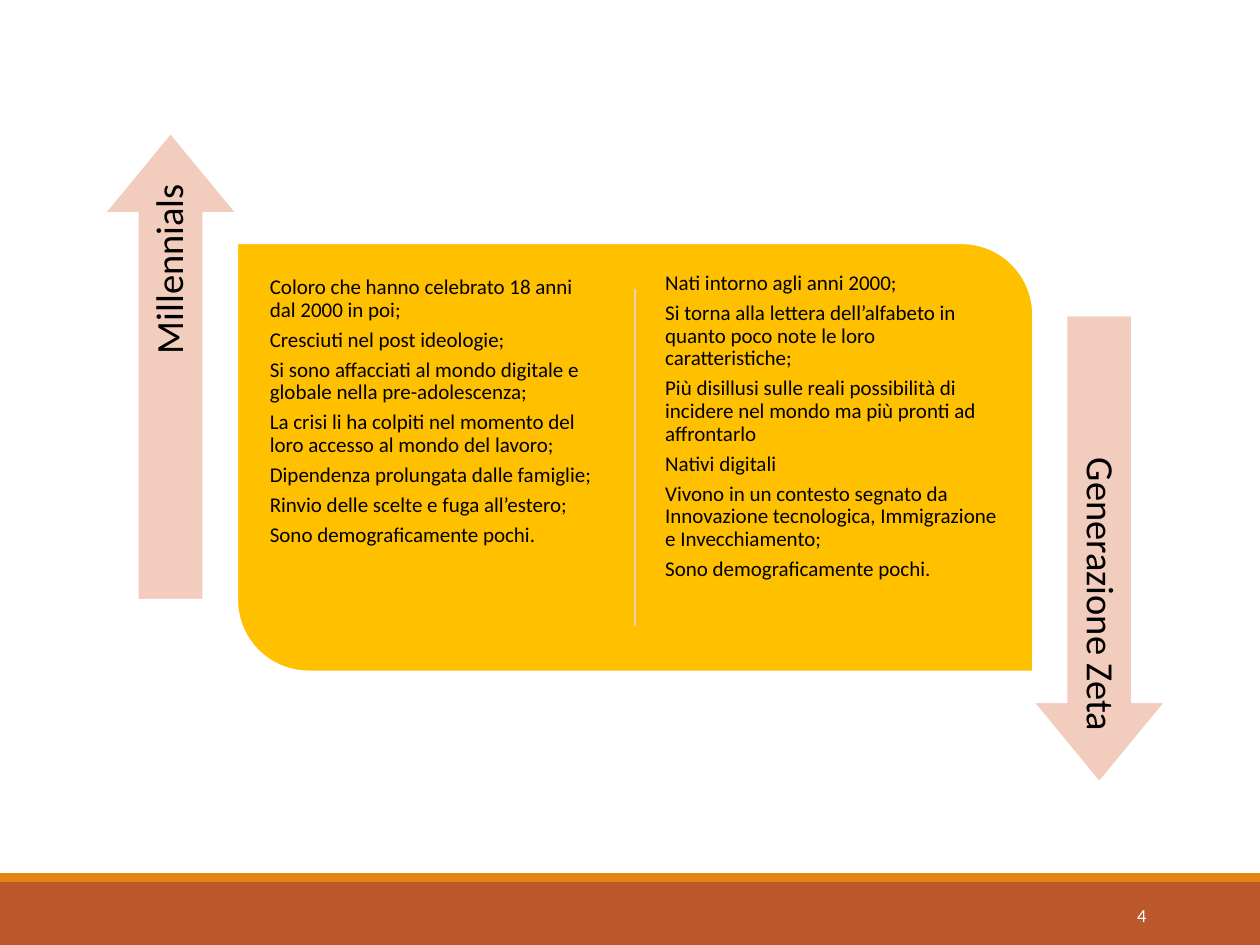
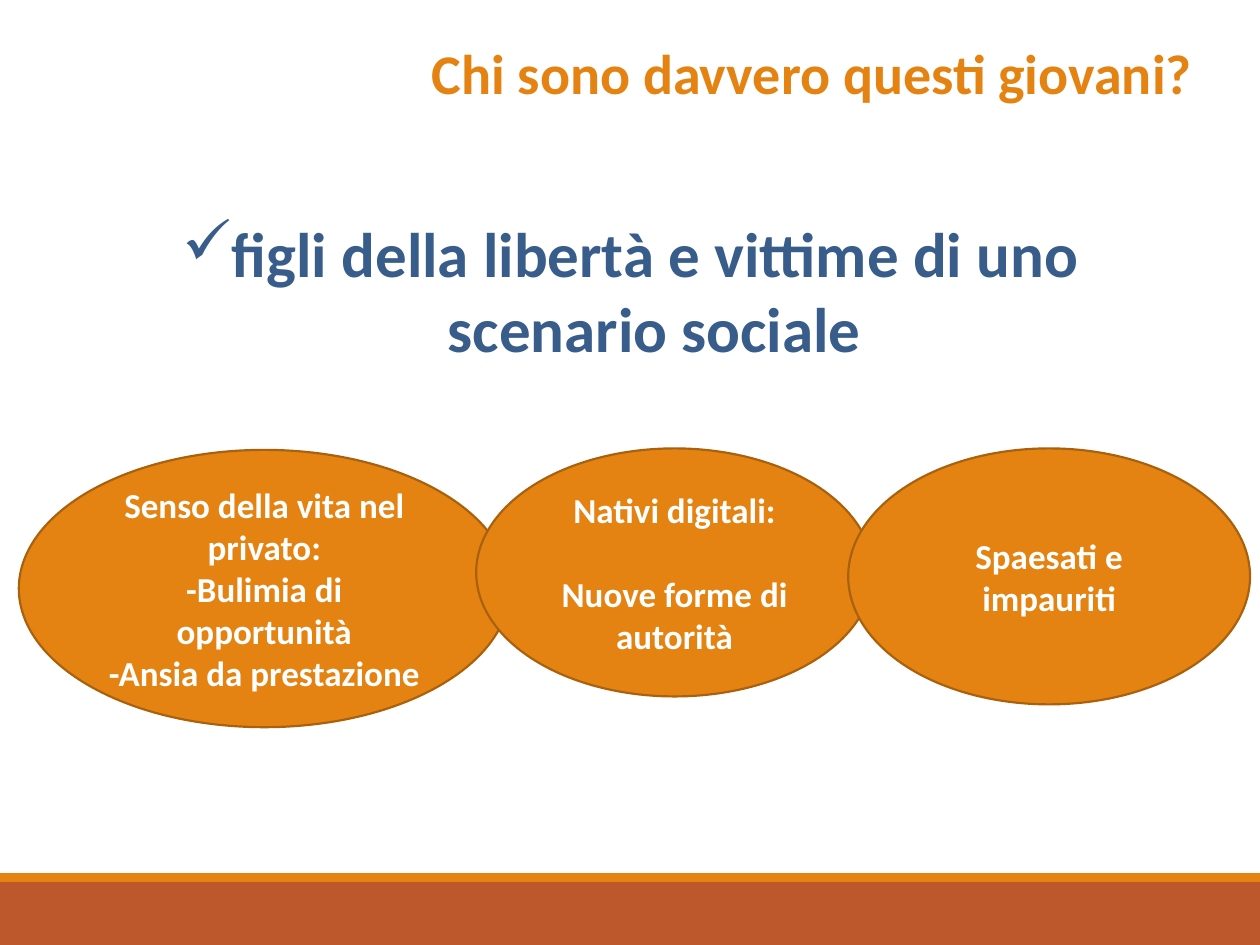
from lxml import etree
from pptx import Presentation
from pptx import util as u
from pptx.dml import color
from pptx.enum import shapes, text
from pptx.oxml import ns

RUST = color.RGBColor(0xBD, 0x58, 0x2C)
ORANGE = color.RGBColor(0xE4, 0x83, 0x12)
BROWN = color.RGBColor(0xA9, 0x61, 0x0D)
GOLD = color.RGBColor(0xFF, 0xC0, 0x00)
PEACH = color.RGBColor(0xF2, 0xCD, 0xBD)
BLUE = color.RGBColor(0x38, 0x5D, 0x8A)
WHITE = color.RGBColor(0xFF, 0xFF, 0xFF)
BLACK = color.RGBColor(0, 0, 0)

FONT = "Calibri"
EDGE = 1.25
WIDE, HIGH = 25.4, 19.05
KIND = shapes.MSO_SHAPE
LEFT, MID, RIGHT = text.PP_ALIGN.LEFT, text.PP_ALIGN.CENTER, text.PP_ALIGN.RIGHT
TOP, CENTRE = text.MSO_ANCHOR.TOP, text.MSO_ANCHOR.MIDDLE

OLDER = [
    "Coloro che hanno celebrato 18 anni dal 2000 in poi;",
    "Cresciuti nel post ideologie;",
    "Si sono affacciati al mondo digitale e globale nella pre-adolescenza;",
    "La crisi li ha colpiti nel momento del loro accesso al mondo del lavoro;",
    "Dipendenza prolungata dalle famiglie;",
    "Rinvio delle scelte e fuga all’estero;",
    "Sono demograficamente pochi.",
]
YOUNGER = [
    "Nati intorno agli anni 2000;",
    "Si torna alla lettera dell’alfabeto in quanto poco note le loro caratteristiche;",
    "Più disillusi sulle reali possibilità di incidere nel mondo ma più pronti ad affrontarlo",
    "Nativi digitali",
    "Vivono in un contesto segnato da Innovazione tecnologica, Immigrazione e Invecchiamento;",
    "Sono demograficamente pochi.",
]
TRAITS = [
    ((0.38, 9.07, 9.9, 5.59), 0,
     ["Senso della vita nel privato:", "-Bulimia di opportunità", "-Ansia da prestazione"]),
    ((9.6, 9.04, 8, 5), 24, ["Nativi digitali:", "Nuove forme di autorità"]),
    ((17.1, 9.04, 8.1, 5.16), 0, ["Spaesati e impauriti"]),
]


def cm(box):
    return [u.Cm(v) for v in box]


def write(shape, lines, size=20, ink=WHITE, bold=False, align=LEFT, anchor=TOP,
          inset=(0.25, 0.13), pitch=1, after=0, gap=0, mark=None, indent=0.97):
    frame = shape.text_frame
    frame.word_wrap = True
    frame.vertical_anchor = anchor
    frame.margin_left = frame.margin_right = u.Cm(inset[0])
    frame.margin_top = frame.margin_bottom = u.Cm(inset[1])
    for i, line in enumerate(lines):
        para = frame.add_paragraph() if i else frame.paragraphs[0]
        para.alignment = align
        para.line_spacing = pitch
        para.space_before = u.Pt(gap if i else 0)
        para.space_after = u.Pt(after)
        run = para.add_run()
        run.text = line
        run.font.name = FONT
        run.font.size = u.Pt(size)
        run.font.bold = bold
        run.font.color.rgb = ink
        if mark:
            props = para._p.get_or_add_pPr()
            props.set("marL", str(u.Cm(indent)))
            props.set("indent", str(-u.Cm(indent)))
            etree.SubElement(props, ns.qn("a:buChar")).set("char", mark)


def label(slide, box, lines, **style):
    write(slide.shapes.add_textbox(*cm(box)), lines, **style)


def block(slide, kind, box, fill, edge=None, bends=()):
    shape = slide.shapes.add_shape(kind, *cm(box))
    shape.shadow.inherit = False
    shape.fill.solid()
    shape.fill.fore_color.rgb = fill
    if edge is None:
        shape.line.fill.background()
    else:
        shape.line.color.rgb = edge
        shape.line.width = u.Pt(EDGE)
    for i, bend in enumerate(bends):
        shape.adjustments[i] = bend
    return shape


def rule(slide, x, top, low, ink):
    line = slide.shapes.add_connector(
        shapes.MSO_CONNECTOR.STRAIGHT, *cm((x, top, x, low)))
    line.line.color.rgb = ink
    line.line.width = u.Pt(EDGE)
    etree.SubElement(line._element.spPr, ns.qn("a:effectLst"))


def footer(slide, box, number=None):
    x, y, w, h = box
    block(slide, KIND.RECTANGLE, box, RUST)
    block(slide, KIND.RECTANGLE, (x, y - 0.18, w, 0.18), ORANGE)
    if number:
        label(slide, (x + 20.62, y + 0.15, 2.74, 1.02), [number], size=10.5,
              align=RIGHT, anchor=CENTRE)


def card(slide, box):
    x, y, w, h = box
    block(slide, KIND.ROUND_2_DIAG_RECTANGLE, box, GOLD, WHITE, (0, 0.167))
    rule(slide, x + w / 2, y + 0.92, y + h - 0.92, PEACH)
    for i, (lines, drop) in enumerate([(OLDER, 0.54), (YOUNGER, 0.46)]):
        label(slide, (x + 0.53 + i * 7.97, y + drop, 6.96, 7.5), lines, size=12,
              ink=BLACK, inset=(0.13, 0.13), pitch=0.9, after=4.2)


def arrow(slide, box, turn, name):
    shape = block(slide, KIND.RIGHT_ARROW, box, PEACH, WHITE, (0.498, 0.607))
    shape.rotation = turn
    write(shape, [name], size=22, ink=BLACK, align=RIGHT, anchor=CENTRE,
          inset=(0.23, 0.23), pitch=0.9)


def compare(slide):
    card(slide, (4.78, 4.9, 16.05, 8.64))
    arrow(slide, (-1.27, 6.05, 9.42, 2.67), 270, "Millennials")
    arrow(slide, (17.45, 9.73, 9.42, 2.67), 90, "Generazione Zeta")


def portrait(slide):
    label(slide, (8.31, 0.64, 16.13, 1.63), ["Chi sono davvero questi giovani?"],
          size=32, ink=ORANGE, bold=True, align=MID)
    label(slide, (1.14, 4.19, 23.14, 3.4),
          ["figli della libertà e vittime di uno scenario sociale"],
          size=36, ink=BLUE, bold=True, align=MID, mark="✓")
    for box, gap, lines in TRAITS:
        write(block(slide, KIND.OVAL, box, ORANGE, BROWN), lines, bold=True,
              align=MID, anchor=CENTRE, gap=gap)


def main():
    deck = Presentation()
    deck.slide_width, deck.slide_height = u.Cm(WIDE), u.Cm(HIGH)
    for fill, number in [(compare, "4"), (portrait, None)]:
        slide = deck.slides.add_slide(deck.slide_layouts[6])
        footer(slide, (0, HIGH - 1.27, WIDE, 1.27), number)
        fill(slide)
    deck.save("out.pptx")


if __name__ == "__main__":
    main()
